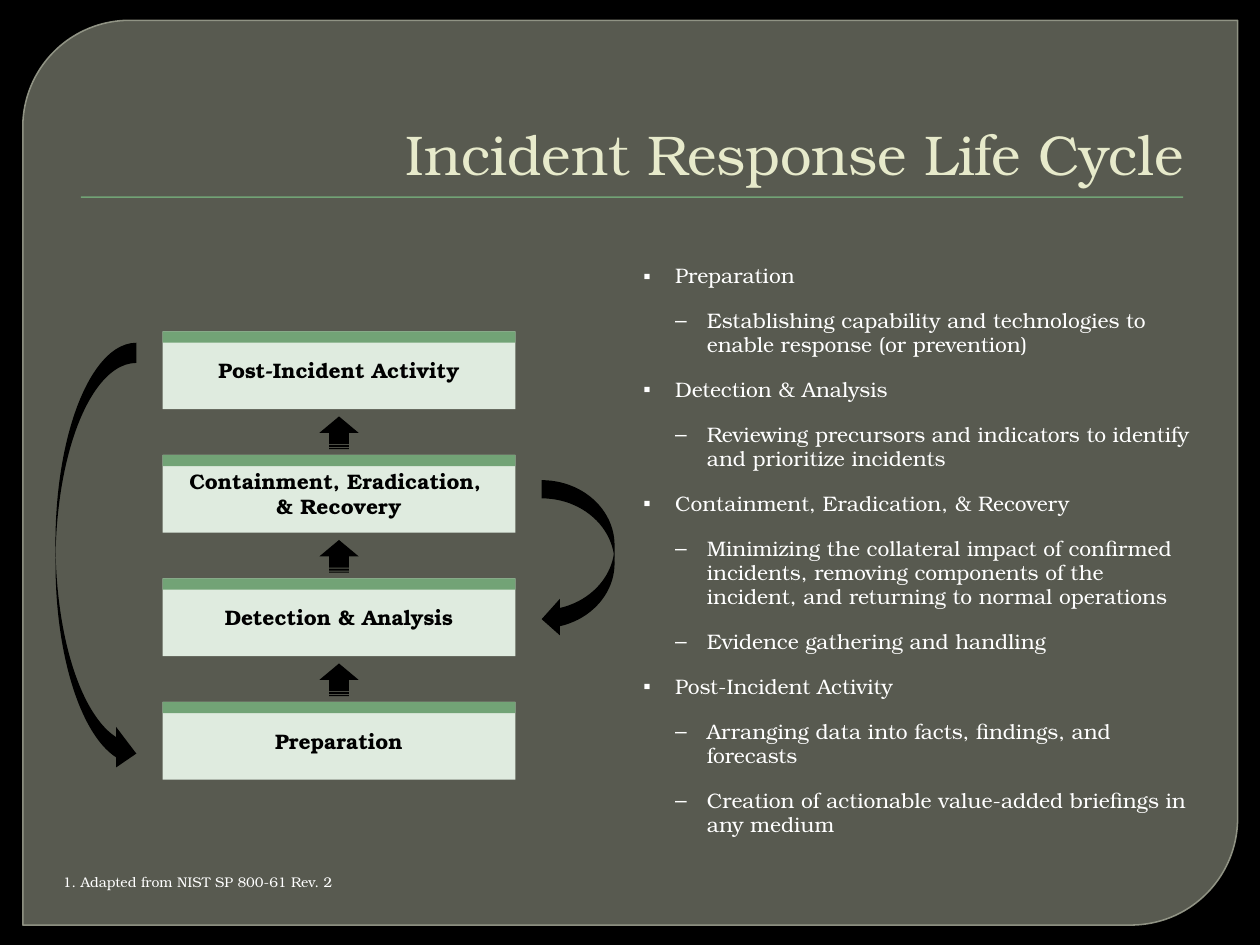
from pptx import Presentation, util as u
from pptx.dml import color
from pptx.enum import shapes, text
from pptx.oxml import ns
from lxml import etree

FONT = "TeX Gyre Bonum"
HUES = {
    "back": "000000", "panel": "888B7B", "edge": "9DA090", "green": "72A376",
    "pale": "DFEBDF", "title": "E7EACB", "light": "FFFFFF", "dark": "000000",
}
KIND = shapes.MSO_SHAPE
ALIGN = text.PP_ALIGN
ANCHOR = text.MSO_ANCHOR

STEPS = ["Post-Incident Activity", "Containment, Eradication, \v& Recovery",
         "Detection & Analysis", "Preparation"]
POINTS = [
    (1, "Preparation"),
    (2, "Establishing capability and technologies to enable response (or prevention)"),
    (1, "Detection & Analysis"),
    (2, "Reviewing precursors and indicators to identify and prioritize incidents"),
    (1, "Containment, Eradication, & Recovery"),
    (2, "Minimizing the collateral impact of confirmed incidents, removing components "
        "of the incident, and returning to normal operations"),
    (2, "Evidence gathering and handling"),
    (1, "Post-Incident Activity"),
    (2, "Arranging data into facts, findings, and forecasts"),
    (2, "Creation of actionable value-added briefings in any medium"),
]


def rgb(hue):
    return color.RGBColor.from_string(HUES[hue])


def place(shape, box):
    shape.left, shape.top, shape.width, shape.height = map(u.Cm, box)


def style(para, size, hue, bold=False):
    font = para.font
    font.name, font.size, font.bold = FONT, u.Pt(size), bold
    font.color.rgb = rgb(hue)


def inset(frame, gap):
    frame.margin_left = frame.margin_right = u.Cm(gap)
    frame.margin_top = frame.margin_bottom = u.Cm(gap)


def draw(parent, kind, box, hue):
    shape = parent.add_shape(kind, *map(u.Cm, box))
    shape.shadow.inherit = False
    shape.fill.solid()
    shape.fill.fore_color.rgb = rgb(hue)
    shape.line.fill.background()
    return shape


def fade(fill, share):
    """Set the opacity of a solid fill, in percent."""
    tint = fill.find(".//" + ns.qn("a:srgbClr"))
    etree.SubElement(tint, ns.qn("a:alpha"), val=str(share * 1000))


def add_frame(slide, box):
    """Rounded panel and title rule, behind everything else."""
    left, top, width, _ = box
    panel = draw(slide.shapes, KIND.ROUND_2_DIAG_RECTANGLE, box, "panel")
    panel.adjustments[0], panel.adjustments[1] = 0.118, 0
    props = panel.element.spPr
    fade(props.find(ns.qn("a:solidFill")), 65)
    panel.line.color.rgb = rgb("edge")
    panel.line.width = u.Pt(0.87)
    fade(props.find(ns.qn("a:ln")), 88)
    rule = draw(slide.shapes, KIND.RECTANGLE,
                (left + 1.17, top + 3.55, width - 2.27, 0.03), "green")
    for part in (panel, rule):
        slide.shapes.title.element.addprevious(part.element)


def add_title(slide, box):
    title = slide.shapes.title
    place(title, box)
    frame = title.text_frame
    frame.text = "Incident Response Life Cycle"
    frame.auto_size = text.MSO_AUTO_SIZE.NONE
    frame.vertical_anchor = ANCHOR.BOTTOM
    para = frame.paragraphs[0]
    para.alignment = ALIGN.RIGHT
    style(para, 32, "title")


def add_list(slide, box):
    body = slide.placeholders[1]
    place(body, box)
    frame = body.text_frame
    frame.text = "\n".join(words for _, words in POINTS)
    frame.auto_size = text.MSO_AUTO_SIZE.NONE
    frame.vertical_anchor = ANCHOR.TOP
    inset(frame, 0.5)
    for i, (para, (level, _)) in enumerate(zip(frame.paragraphs, POINTS)):
        para.level = level
        para.line_spacing = 0.95
        para.space_before = u.Pt(6 if i else 0)
        para.space_after = u.Pt(6)
        # Bullet and hanging indent
        props = para._p.get_or_add_pPr()
        props.set("marL", str(u.Cm(0.64 * level)))
        props.set("indent", str(u.Cm(-0.64)))
        etree.SubElement(props, ns.qn("a:buChar"), char=" ▪–"[level])
        style(para, 12, "light")


def add_step(parent, box, words):
    left, top, width, _ = box
    card = draw(parent, KIND.RECTANGLE, box, "pale")
    frame = card.text_frame
    frame.text = words
    frame.word_wrap = True
    frame.vertical_anchor = ANCHOR.MIDDLE
    inset(frame, 0.13)
    para = frame.paragraphs[0]
    para.alignment = ALIGN.CENTER
    style(para, 12, "dark", True)
    draw(parent, KIND.RECTANGLE, (left, top, width, 0.23), "green")


def add_cycle(slide, box):
    """Stack of steps with arrows between them and a loop on each side."""
    left, top, width, height = box
    group = slide.shapes.add_group_shape().shapes
    tall = 1.57
    pitch = (height - tall) / (len(STEPS) - 1)
    for i, words in enumerate(STEPS):
        add_step(group, (left, top + i * pitch, width, tall), words)

    # Loops: right side back one step, left side back to the start
    loop = KIND.CURVED_LEFT_ARROW
    draw(group, loop, (left + width + 0.53, top + 3, 1.47, 3.17), "dark")
    back = draw(group, loop, (left - 2.16, top + 0.23, 1.63, 8.69), "dark")
    back.element.spPr.find(ns.qn("a:xfrm")).set("flipH", "1")

    # Upward arrows in the gaps
    wide, high = 0.66, 0.79
    for i in range(len(STEPS) - 1):
        spot = (left + (width - wide) / 2, top + i * pitch + tall + 0.08, wide, high)
        draw(group, KIND.STRIPED_RIGHT_ARROW, spot, "dark").rotation = 270


def add_note(slide, box):
    frame = slide.shapes.add_textbox(*map(u.Cm, box)).text_frame
    frame.text = "1. Adapted from NIST SP 800-61 Rev. 2"
    frame.word_wrap = True
    frame.vertical_anchor = ANCHOR.MIDDLE
    inset(frame, 0)
    style(frame.paragraphs[0], 8, "light")


def main():
    deck = Presentation()
    deck.slide_width, deck.slide_height = u.Cm(25.4), u.Cm(19.05)
    slide = deck.slides.add_slide(deck.slide_layouts[1])
    fill = slide.background.fill
    fill.solid()
    fill.fore_color.rgb = rgb("back")
    add_frame(slide, (0.46, 0.41, 24.49, 18.24))
    add_title(slide, (1.27, 0.71, 22.86, 3.18))
    add_note(slide, (1.27, 17.53, 22.86, 0.48))
    add_list(slide, (12.47, 4.83, 12.09, 12.09))
    add_cycle(slide, (3.28, 6.68, 7.11, 9.04))
    deck.save("out.pptx")


if __name__ == "__main__":
    main()
